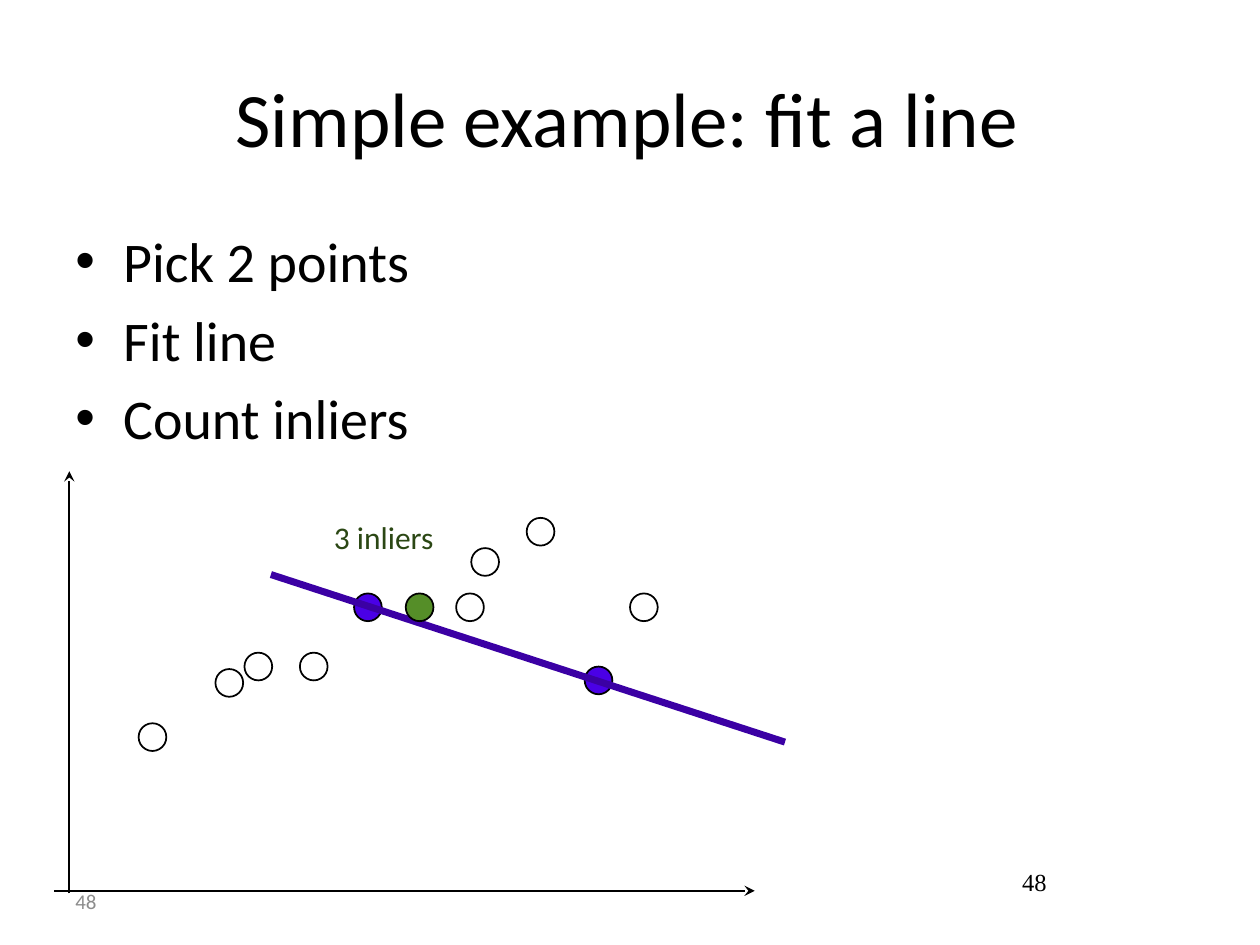
from lxml import etree
from pptx import Presentation
from pptx.dml.color import RGBColor
from pptx.enum.shapes import MSO_CONNECTOR, MSO_SHAPE
from pptx.enum.text import MSO_ANCHOR, PP_ALIGN
from pptx.oxml.ns import qn
from pptx.util import Pt

PX = 9144  # 100 px to the inch

BLACK = RGBColor(0x00, 0x00, 0x00)
WHITE = RGBColor(0xFF, 0xFF, 0xFF)
GRAY = RGBColor(0x8C, 0x8C, 0x8C)
PICKED = RGBColor(0x4A, 0x00, 0xE6)
FIT_LINE = RGBColor(0x3B, 0x00, 0xA4)
INLIER = RGBColor(0x55, 0x8E, 0x28)
INLIER_TEXT = RGBColor(0x2B, 0x47, 0x14)

LEFT, CENTER = PP_ALIGN.LEFT, PP_ALIGN.CENTER
TOP, MIDDLE = MSO_ANCHOR.TOP, MSO_ANCHOR.MIDDLE
STRAIGHT, OVAL = MSO_CONNECTOR.STRAIGHT, MSO_SHAPE.OVAL

DOT = 22
# left and top of each dot, relative to the plot box
OUTLIERS = [(67, 200), (128, 157), (195, 144), (319, 97),
            (375, 37), (331, 61), (151, 144), (457, 97)]
PICKED_POINTS = [(238, 97), (421, 155)]
NEAR_POINT = (279, 97)


def add_text(slide, box, lines, size, color, font="Calibri", align=LEFT,
             anchor=TOP, insets=(10, 5, 10, 5), wrap=True):
    tf = slide.shapes.add_textbox(*(v * PX for v in box)).text_frame
    tf.word_wrap = wrap
    tf.vertical_anchor = anchor
    tf.margin_left, tf.margin_top, tf.margin_right, tf.margin_bottom = (
        v * PX for v in insets)
    tf.text = "\n".join(lines)
    for p in tf.paragraphs:
        p.alignment = align
        for r in p.runs:
            r.font.size = Pt(size)
            r.font.name = font
            r.font.color.rgb = color
    return tf


def add_line(slide, start, end, color, width, arrow=False):
    """Draw a straight line, with an optional arrowhead at its end."""
    line = slide.shapes.add_connector(
        STRAIGHT, *(v * PX for v in (*start, *end)))
    line.line.color.rgb = color
    line.line.width = Pt(width)
    if arrow:
        etree.SubElement(line.line._get_or_add_ln(), qn("a:tailEnd"),
                         type="stealth")
    etree.SubElement(line._element.spPr, qn("a:effectLst"))


def add_dot(slide, x, y, color):
    sp = slide.shapes.add_shape(OVAL, x * PX, y * PX, DOT * PX, DOT * PX)
    sp.shadow.inherit = False
    sp.fill.solid()
    sp.fill.fore_color.rgb = color
    sp.line.color.rgb = BLACK
    sp.line.width = Pt(1)


def add_bullets(slide, box, items):
    tf = add_text(slide, box, items, 32, BLACK, insets=(10, 5, 14, 5))
    for p in tf.paragraphs:
        p.space_before = Pt(6.4)
        pPr = p._p.get_or_add_pPr()
        pPr.set("marL", str(38 * PX))
        pPr.set("indent", str(-38 * PX))
        etree.SubElement(pPr, qn("a:buFont"), typeface="Arial")
        etree.SubElement(pPr, qn("a:buChar"), char="•")


def add_plot(slide, box):
    """Draw the axes, the points and the fitted line in the plot box."""
    left, top, width, height = box

    def at(x, y):
        return left + x, top + y

    add_line(slide, at(12, height), at(12, 0), BLACK, 1, arrow=True)
    add_line(slide, at(0, height - 2), at(width, height - 2), BLACK, 1,
             arrow=True)
    for points, color in ((OUTLIERS, WHITE), (PICKED_POINTS, PICKED)):
        for point in points:
            add_dot(slide, *at(*point), color)
    add_line(slide, at(172, 82), at(580, 215), FIT_LINE, 4)
    add_dot(slide, *at(*NEAR_POINT), INLIER)
    add_text(slide, (*at(218, 37), 124, 40), ["3 inliers"], 18, INLIER_TEXT,
             insets=(4, 0, 4, 0), wrap=False)


def add_page_numbers(slide, footer_box, corner_box, number):
    add_text(slide, footer_box, [number], 12, GRAY, anchor=MIDDLE)
    add_text(slide, corner_box, [number], 14, BLACK, "Times New Roman",
             align=CENTER, insets=(0, 5, 0, 5), wrap=False)


def main():
    prs = Presentation()
    prs.slide_width, prs.slide_height = 1000 * PX, 750 * PX
    slide = prs.slides.add_slide(prs.slide_layouts[6])
    add_page_numbers(slide, (50, 695, 233, 40), (805, 683, 32, 32), "48")
    add_text(slide, (50, 30, 900, 125), ["Simple example: fit a line"], 44,
             BLACK, align=CENTER, anchor=MIDDLE, insets=(10, 5, 14, 5))
    add_bullets(slide, (50, 175, 900, 495),
                ["Pick 2 points", "Fit line", "Count inliers"])
    add_plot(slide, (43, 374, 556, 335))
    prs.save("out.pptx")


if __name__ == "__main__":
    main()
